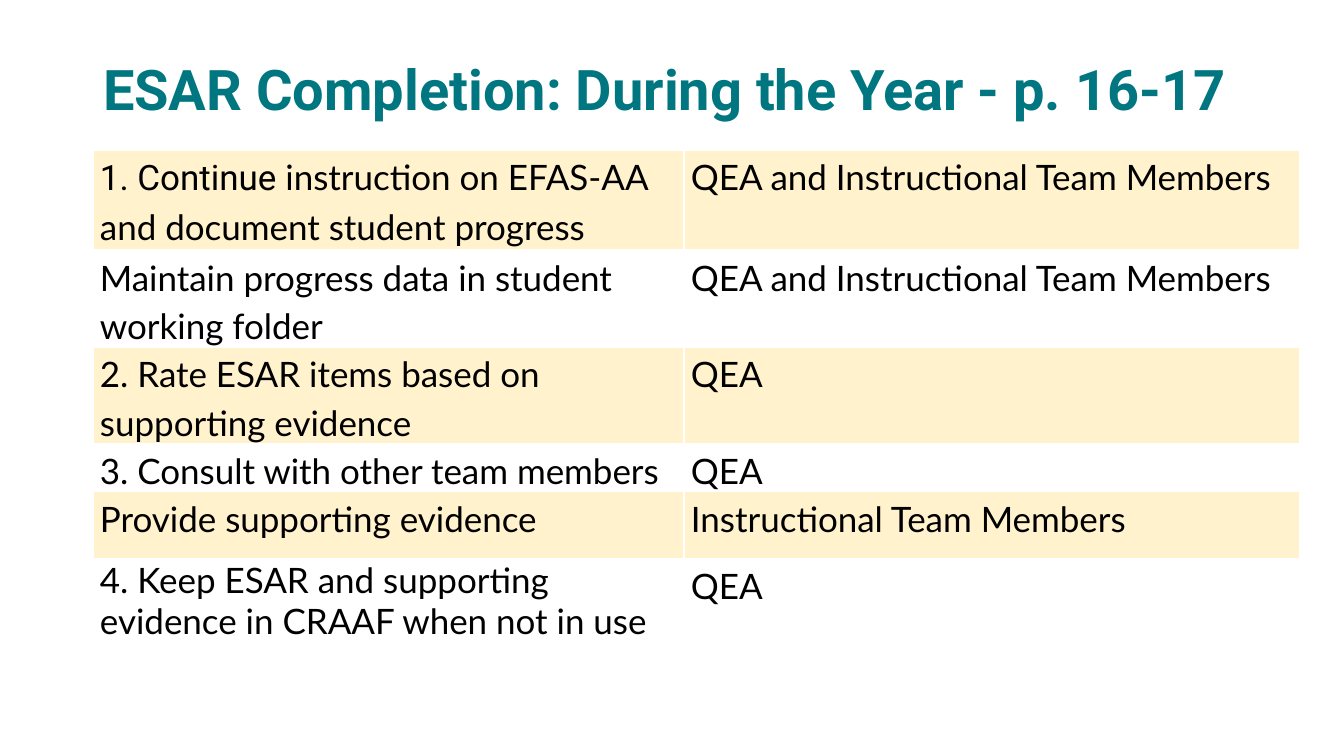
from lxml import etree
from pptx import Presentation
from pptx import util as u
from pptx.dml.color import RGBColor
from pptx.enum import text
from pptx.oxml import ns

EMU_PER_PX = 914400 / 100.8
LEFT, WIDTH = 93, 1207
COLUMNS = [591, 616]
HEIGHTS = [101, 90, 90, 43, 67, 81]
TEAM = "Instructional Team Members"
BOTH = f"QEA and {TEAM}"
TASKS = [
    ("1. Continue| instruction on EFAS-AA and document student progress", BOTH),
    ("Maintain progress data in student working folder", BOTH),
    ("2. Rate ESAR items based on supporting evidence", "QEA"),
    ("3. Consult with other team members", "QEA"),
    ("Provide supporting evidence", TEAM),
    ("4. Keep ESAR and supporting evidence in CRAAF when not in use", "QEA"),
]


def px(length):
    """Turn pixels into EMU."""
    return u.Emu(round(length * EMU_PER_PX))


def color(code):
    """Turn a hex string into a colour."""
    return RGBColor.from_string(code)


def write(para, words, font="Lato", size=25, ink="000000", bold=False, spacing=1.0, after=0):
    """Add a formatted span of text to a paragraph."""
    para.alignment = text.PP_ALIGN.LEFT
    para.line_spacing = spacing
    para.space_before, para.space_after = u.Pt(0), u.Pt(after)
    span = para.add_run()
    span.text = words
    span.font.name, span.font.size, span.font.bold = font, u.Pt(size), bold
    span.font.color.rgb = color(ink)


class Slide:
    """Hold the style and the page being built."""

    teal, cream, white = "007780", "FFF2CC", "FFFFFF"

    def __init__(self, deck):
        """Add a title-only page to the deck."""
        self.page = deck.slides.add_slide(deck.slide_layouts[5])
        self.page.background.fill.solid()
        self.page.background.fill.fore_color.rgb = color(self.white)

    def title(self, words, left, top, width, height):
        """Place and fill the title."""
        box = self.page.shapes.title
        box.left, box.top, box.width, box.height = map(px, (left, top, width, height))
        frame = box.text_frame
        frame.word_wrap, frame.auto_size = True, text.MSO_AUTO_SIZE.NONE
        frame.vertical_anchor = text.MSO_ANCHOR.MIDDLE
        write(frame.paragraphs[0], words, "Roboto", 40, self.teal, True, 0.9)

    def borders(self, cell, bottom):
        """Draw white lines on the four sides of a cell."""
        properties = cell._tc.get_or_add_tcPr()
        sides = {"lnL": 1, "lnR": 1, "lnT": 1, "lnB": bottom}
        for place, (side, points) in enumerate(sides.items()):
            line = etree.Element(ns.qn(f"a:{side}"), w=str(u.Pt(points)))
            fill = etree.SubElement(line, ns.qn("a:solidFill"))
            etree.SubElement(fill, ns.qn("a:srgbClr"), val=self.white)
            properties.insert(place, line)

    def cell(self, cell, words, shaded, bottom, spacing, after):
        """Fill and format one table cell."""
        cell.margin_left = cell.margin_right = px(7)
        cell.margin_top = cell.margin_bottom = 0
        cell.vertical_anchor = text.MSO_ANCHOR.TOP
        if shaded:
            cell.fill.solid()
            cell.fill.fore_color.rgb = color(self.cream)
        else:
            cell.fill.background()
        self.borders(cell, bottom)
        para = cell.text_frame.paragraphs[0]
        lead, mark, rest = words.partition("|")
        if mark:
            write(para, lead, "Roboto", spacing=spacing, after=after)
        write(para, rest if mark else lead, spacing=spacing, after=after)

    def table(self, rows, left, top, widths, heights):
        """Add a table with every other row shaded."""
        frame = self.page.shapes.add_table(
            len(rows), len(widths), px(left), px(top), px(sum(widths)), px(sum(heights)))
        table = frame.table
        table.first_row = table.horz_banding = False
        for column, width in zip(table.columns, widths):
            column.width = px(width)
        for i, (row, height) in enumerate(zip(rows, heights)):
            table.rows[i].height = px(height)
            for j, words in enumerate(row):
                tight = words.startswith("4.")
                self.cell(table.cell(i, j), words, i % 2 == 0, 3 if i == 0 else 1,
                          1.0 if tight else 1.15, 0 if tight else 10)


def main():
    """Build and save the deck."""
    deck = Presentation()
    deck.slide_width, deck.slide_height = px(1344), px(756)
    slide = Slide(deck)
    slide.title("ESAR Completion: During the Year - p. 16-17", LEFT, 19, WIDTH, 146)
    slide.table(TASKS, LEFT, 150, COLUMNS, HEIGHTS)
    deck.save("out.pptx")


if __name__ == "__main__":
    main()
